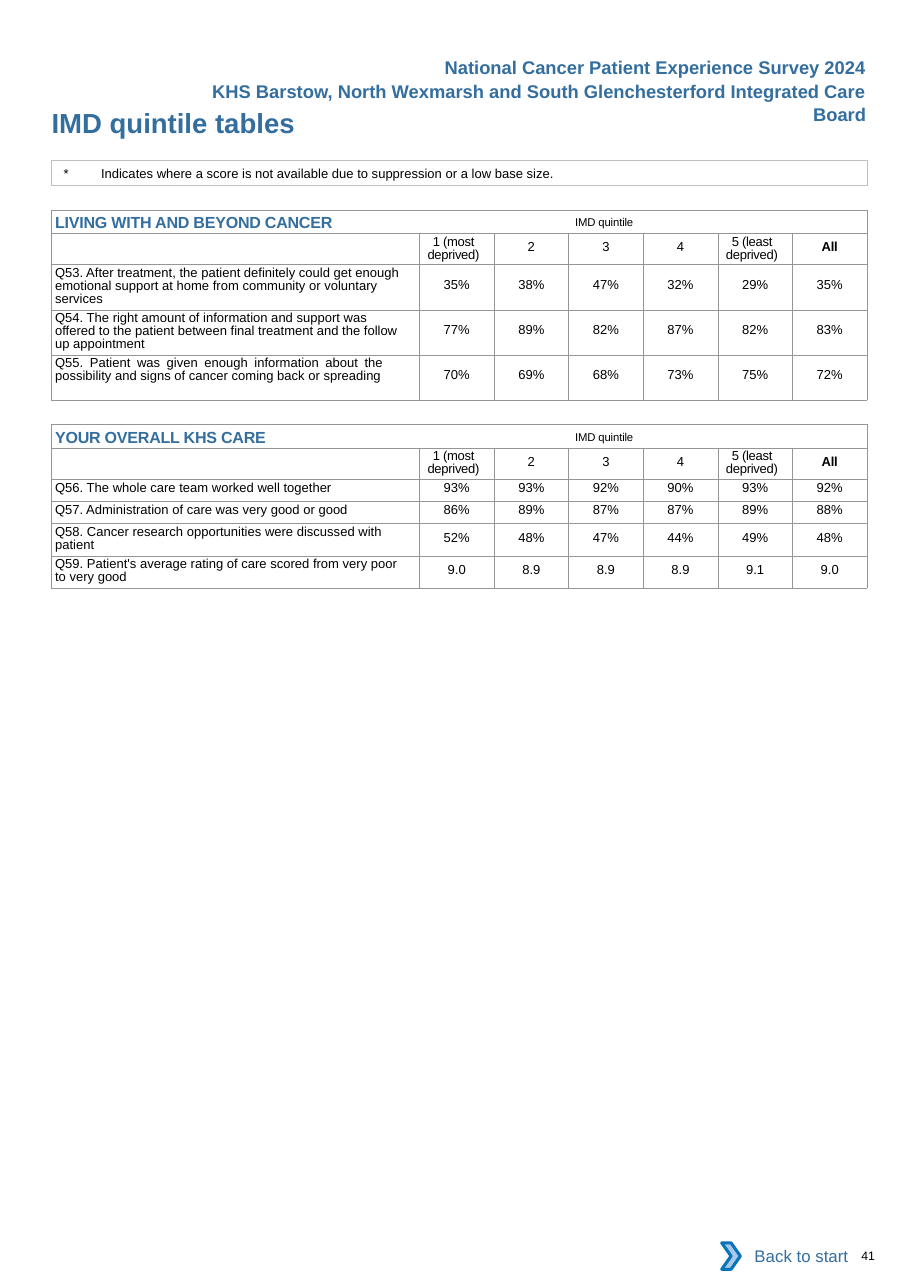
from dataclasses import dataclass

from lxml.etree import SubElement
from pptx import Presentation
from pptx.dml.color import RGBColor
from pptx.enum.shapes import MSO_SHAPE
from pptx.enum.text import MSO_ANCHOR, PP_ALIGN
from pptx.oxml.ns import qn
from pptx.util import Cm, Pt


@dataclass(frozen=True)
class Theme:
    font: str = "Arial"
    blue: RGBColor = RGBColor(0x33, 0x6E, 0x9F)
    black: RGBColor = RGBColor(0, 0, 0)
    white: RGBColor = RGBColor(0xFF, 0xFF, 0xFF)
    note_line: RGBColor = RGBColor(0xBF, 0xBF, 0xBF)
    chevron_fill: RGBColor = RGBColor(0xA8, 0xC7, 0xE9)
    chevron_line: RGBColor = RGBColor(0x0A, 0x74, 0xBB)
    grid: str = "939598"
    title: float = 18
    heading: float = 12
    link: float = 11
    section: float = 10.5
    quintile: float = 12.8
    body: float = 8.5
    page_number: float = 8
    leading: float = 8.6


THEME = Theme()

LEFT, WIDTH = 1.19, 18.8
QUESTION_WIDTH, SCORE_WIDTH = 8.48, 1.72
TITLE_ROW, HEADER_ROW = 0.54, 0.72
HEADERS = ["1 (most deprived)", "2", "3", "4", "5 (least deprived)", "All"]

# Row height and top margin of the scores, by the room a question takes
ONE_LINE, TWO_LINES, THREE_LINES = (0.51, 0.03), (0.74, 0.15), (1.04, 0.3)

LIVING = [
    ("Q53. After treatment, the patient definitely could get enough emotional support "
     "at home from community or voluntary services", THREE_LINES, "35% 38% 47% 32% 29% 35%"),
    ("Q54. The right amount of information and support was offered to the patient between "
     "final treatment and the follow up appointment", THREE_LINES, "77% 89% 82% 87% 82% 83%"),
    ("Q55. Patient was given enough information about the possibility and signs of cancer "
     "coming back or spreading", THREE_LINES, "70% 69% 68% 73% 75% 72%"),
]
OVERALL = [
    ("Q56. The whole care team worked well together", ONE_LINE, "93% 93% 92% 90% 93% 92%"),
    ("Q57. Administration of care was very good or good", ONE_LINE, "86% 89% 87% 87% 89% 88%"),
    ("Q58. Cancer research opportunities were discussed with patient",
     TWO_LINES, "52% 48% 47% 44% 49% 48%"),
    ("Q59. Patient's average rating of care scored from very poor to very good",
     TWO_LINES, "9.0 8.9 8.9 8.9 9.1 9.0"),
]


def add_span(para, text, size, color=THEME.black, bold=False, spacing=0, baseline=0):
    """Add one run; spacing is in points and baseline in percent."""
    span = para.add_run()
    span.text = text
    font = span.font
    font.name, font.size, font.bold = THEME.font, Pt(size), bold
    font.color.rgb = color
    properties = span._r.get_or_add_rPr()
    if spacing:
        properties.set("spc", str(round(spacing * 100)))
    if baseline:
        properties.set("baseline", str(baseline * 1000))


def add_tab_stop(para, position):
    stops = SubElement(para._p.get_or_add_pPr(), qn("a:tabLst"))
    SubElement(stops, qn("a:tab"), pos=str(Cm(position)), algn="l")


def set_margins(target, left=0, top=0, right=0, bottom=0):
    target.margin_left, target.margin_top = Cm(left), Cm(top)
    target.margin_right, target.margin_bottom = Cm(right), Cm(bottom)


def add_text(slide, place, text, size, color=THEME.blue, bold=True,
             align=PP_ALIGN.LEFT, inset=(0, 0, 0, 0)):
    box = slide.shapes.add_textbox(*map(Cm, place))
    frame = box.text_frame
    frame.word_wrap = True
    set_margins(frame, *inset)
    para = frame.paragraphs[0]
    para.alignment = align
    add_span(para, text, size, color, bold)


def add_outline(shapes, kind, place, fill=None, line=None, weight=0.5):
    shape = shapes.add_shape(kind, *map(Cm, place))
    shape.shadow.inherit = False
    if fill is None:
        shape.fill.background()
    else:
        shape.fill.solid()
        shape.fill.fore_color.rgb = fill
    if line is None:
        shape.line.fill.background()
    else:
        shape.line.color.rgb = line
        shape.line.width = Pt(weight)
    return shape


def add_note(slide):
    box = add_outline(slide.shapes, MSO_SHAPE.RECTANGLE, (LEFT, 3.7, WIDTH, 0.57),
                      line=THEME.note_line)
    frame = box.text_frame
    frame.vertical_anchor = MSO_ANCHOR.MIDDLE
    set_margins(frame, left=0.28)
    para = frame.paragraphs[0]
    para.alignment = PP_ALIGN.LEFT
    add_tab_stop(para, 0.86)
    add_span(para, "*", THEME.body)
    add_span(para, "\tIndicates where a score is not available due to suppression "
                   "or a low base size.", THEME.body)


def style_cell(cell):
    """Clear fill and margins, keep empty cells low and draw the grid lines."""
    cell.fill.background()
    set_margins(cell)
    end = SubElement(cell.text_frame.paragraphs[0]._p, qn("a:endParaRPr"))
    end.set("sz", str(round(THEME.body * 100)))
    properties = cell._tc.get_or_add_tcPr()
    for index, side in enumerate(("lnL", "lnR", "lnT", "lnB")):
        line = SubElement(properties, qn(f"a:{side}"), w=str(Pt(0.5)))
        fill = SubElement(line, qn("a:solidFill"))
        SubElement(fill, qn("a:srgbClr"), val=THEME.grid)
        properties.insert(index, line)


def fill_title(cell, title):
    cell.vertical_anchor = MSO_ANCHOR.MIDDLE
    set_margins(cell, left=0.08)
    para = cell.text_frame.paragraphs[0]
    add_tab_stop(para, 11.99)
    add_span(para, title + "\t", THEME.section, THEME.blue, bold=True, spacing=-0.1)
    add_span(para, "IMD quintile", THEME.quintile, spacing=-0.1, baseline=10)


def fill_header(cell, label):
    two_lines = " " in label
    set_margins(cell, top=0.05 if two_lines else 0.15, right=0.15 if two_lines else 0)
    para = cell.text_frame.paragraphs[0]
    para.alignment = PP_ALIGN.CENTER
    if two_lines:
        para.line_spacing = Pt(THEME.leading)
    add_span(para, label, THEME.body, bold=label == "All", spacing=-0.2)


def fill_question(cell, question, room):
    justified = question.startswith("Q55")
    set_margins(cell, left=0.08, top=0.03 if room == ONE_LINE else 0.05,
                right=0.84 if justified else 0.43)
    para = cell.text_frame.paragraphs[0]
    para.alignment = PP_ALIGN.JUSTIFY if justified else PP_ALIGN.LEFT
    if room != ONE_LINE:
        para.line_spacing = Pt(THEME.leading)
    add_span(para, question, THEME.body)


def fill_score(cell, score, top):
    set_margins(cell, top=top)
    para = cell.text_frame.paragraphs[0]
    para.alignment = PP_ALIGN.CENTER
    add_span(para, score, THEME.body)


def add_score_table(slide, top, title, questions):
    heights = [TITLE_ROW, HEADER_ROW] + [room[0] for _, room, _ in questions]
    columns = len(HEADERS) + 1
    table = slide.shapes.add_table(len(heights), columns, Cm(LEFT), Cm(top),
                                   Cm(WIDTH), Cm(sum(heights))).table
    table.first_row = table.horz_banding = False
    for index, column in enumerate(table.columns):
        column.width = Cm(SCORE_WIDTH if index else QUESTION_WIDTH)
    for row, height in zip(table.rows, heights):
        row.height = Cm(height)
    for cell in table.iter_cells():
        style_cell(cell)

    table.cell(0, 0).merge(table.cell(0, columns - 1))
    fill_title(table.cell(0, 0), title)
    for column, label in enumerate(HEADERS, 1):
        fill_header(table.cell(1, column), label)
    for row, (question, room, scores) in enumerate(questions, 2):
        fill_question(table.cell(row, 0), question, room)
        for column, score in enumerate(scores.split(), 1):
            fill_score(table.cell(row, column), score, room[1])


def add_back_button(slide):
    shapes = slide.shapes.add_group_shape().shapes
    label = add_outline(shapes, MSO_SHAPE.RECTANGLE, (16.81, 28.42, 3, 1.07), THEME.white)
    frame = label.text_frame
    frame.word_wrap = True
    frame.vertical_anchor = MSO_ANCHOR.MIDDLE
    para = frame.paragraphs[0]
    para.alignment = PP_ALIGN.RIGHT
    add_span(para, "Back to start", THEME.link, THEME.blue)
    add_outline(shapes, MSO_SHAPE.CHEVRON, (16.64, 28.65, 0.43, 0.61),
                THEME.chevron_fill, THEME.chevron_line, 2)


def main():
    deck = Presentation()
    deck.slide_width, deck.slide_height = Cm(20.98), Cm(29.69)
    slide = deck.slides.add_slide(deck.slide_layouts[6])
    heading = dict(size=THEME.heading, align=PP_ALIGN.RIGHT, inset=(0.25, 0.13, 0.25, 0.13))

    add_text(slide, (19.61, 28.78, 1.3, 0.33), "41", THEME.page_number, THEME.black,
             bold=False, inset=(0.25, 0, 0, 0))
    add_text(slide, (LEFT, 2.44, 11.43, 0.76), "IMD quintile tables", THEME.title)
    add_score_table(slide, 4.84, "LIVING WITH AND BEYOND CANCER", LIVING)
    add_score_table(slide, 9.79, "YOUR OVERALL KHS CARE", OVERALL)
    add_text(slide, (4.57, 1.73, 15.65, 1.27), "KHS Barstow, North Wexmarsh and South "
             "Glenchesterford Integrated Care Board", **heading)
    add_text(slide, (9.96, 1.17, 10.26, 0.76),
             "National Cancer Patient Experience Survey 2024", **heading)
    add_note(slide)
    add_back_button(slide)
    deck.save("out.pptx")


if __name__ == "__main__":
    main()
